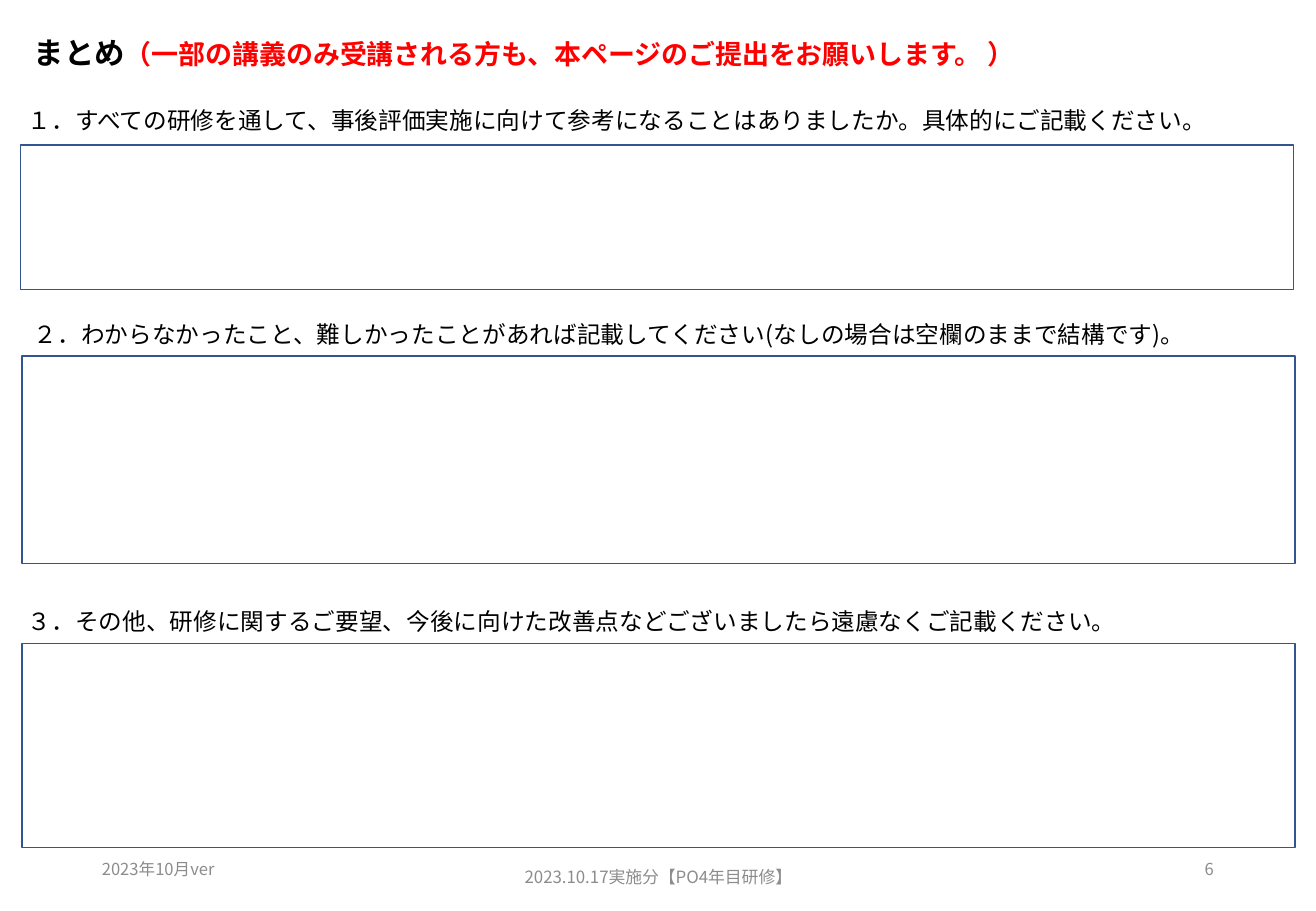
from dataclasses import dataclass

from lxml import etree
from pptx import Presentation
from pptx import util as u
from pptx.dml.color import RGBColor
from pptx.enum import shapes, text
from pptx.oxml import ns


@dataclass(frozen=True)
class Theme:
    font: str = "Noto Sans CJK JP"
    ink: str = "000000"
    alert: str = "FF0000"
    muted: str = "8C8C8C"
    paper: str = "FFFFFF"
    border: str = "325491"
    title: float = 18
    notice: float = 16
    question: float = 14
    footer: float = 10
    footer_small: float = 9.8


class Sheet:
    """Style and current slide, with one method per kind of element."""

    def __init__(self, slide, theme):
        self.slide = slide
        self.theme = theme

    def add_run(self, paragraph, words, *, size, color, bold=False):
        run = paragraph.add_run()
        run.text = words
        run.font.size = u.Pt(size)
        run.font.bold = bold
        run.font.color.rgb = RGBColor.from_string(color)
        run.font.name = self.theme.font
        # Japanese glyphs take the East Asian typeface
        east_asian = etree.SubElement(run._r.get_or_add_rPr(), ns.qn("a:ea"))
        east_asian.set("typeface", self.theme.font)

    def label(self, words, box, *, size, color, bold=False,
              align=text.PP_ALIGN.LEFT, anchor=text.MSO_ANCHOR.TOP):
        frame = self.slide.shapes.add_textbox(*map(u.Pt, box)).text_frame
        frame.word_wrap = True
        frame.vertical_anchor = anchor
        paragraph = frame.paragraphs[0]
        paragraph.alignment = align
        self.add_run(paragraph, words, size=size, color=color, bold=bold)
        return paragraph

    def answer_box(self, box):
        answer = self.slide.shapes.add_shape(
            shapes.MSO_SHAPE.RECTANGLE, *map(u.Pt, box))
        answer.shadow.inherit = False
        answer.fill.solid()
        answer.fill.fore_color.rgb = RGBColor.from_string(self.theme.paper)
        answer.line.color.rgb = RGBColor.from_string(self.theme.border)
        answer.line.width = u.Pt(1)


def main():
    deck = Presentation()
    deck.slide_width, deck.slide_height = u.Pt(780), u.Pt(540)
    theme = Theme()
    sheet = Sheet(deck.slides.add_slide(deck.slide_layouts[6]), theme)
    middle = text.MSO_ANCHOR.MIDDLE

    # Heading with notice
    heading = sheet.label("まとめ", (13, -3, 714, 71), size=theme.title,
                          color=theme.ink, bold=True, anchor=middle)
    heading.line_spacing = 0.9
    sheet.add_run(heading, "（一部の講義のみ受講される方も、本ページのご提出をお願いします。 ）",
                  size=theme.notice, color=theme.alert, bold=True)

    # Questions: wording, left and top, then left, top and height of the answer
    box_width = 754.5
    questions = [
        ("１．すべての研修を通して、事後評価実施に向けて参考になることはありましたか。具体的にご記載ください。",
         9.4, 59, 12.2, 85.9, 85.7),
        ("２．わからなかったこと、難しかったことがあれば記載してください(なしの場合は空欄のままで結構です)。",
         13, 185.8, 13, 211, 123),
        ("３．その他、研修に関するご要望、今後に向けた改善点などございましたら遠慮なくご記載ください。",
         9.4, 356.4, 13, 381.4, 121),
    ]
    for question, left, top, box_left, box_top, box_height in questions:
        sheet.answer_box((box_left, box_top, box_width, box_height))
        sheet.label(question, (left, top, box_width, 24.5),
                    size=theme.question, color=theme.ink)

    # Footer: version, session, page number
    footers = [
        ("2023年10月ver", 53.3, 500.4, 175.7, theme.footer_small,
         text.PP_ALIGN.LEFT),
        ("2023.10.17実施分【PO4年目研修】", 258.5, 505.4, 263.5, theme.footer,
         text.PP_ALIGN.CENTER),
        ("6", 550.8, 500.4, 175.7, theme.footer_small, text.PP_ALIGN.RIGHT),
    ]
    for words, left, top, width, size, align in footers:
        sheet.label(words, (left, top, width, 28.8), size=size,
                    color=theme.muted, align=align, anchor=middle)

    deck.save("out.pptx")


if __name__ == "__main__":
    main()
